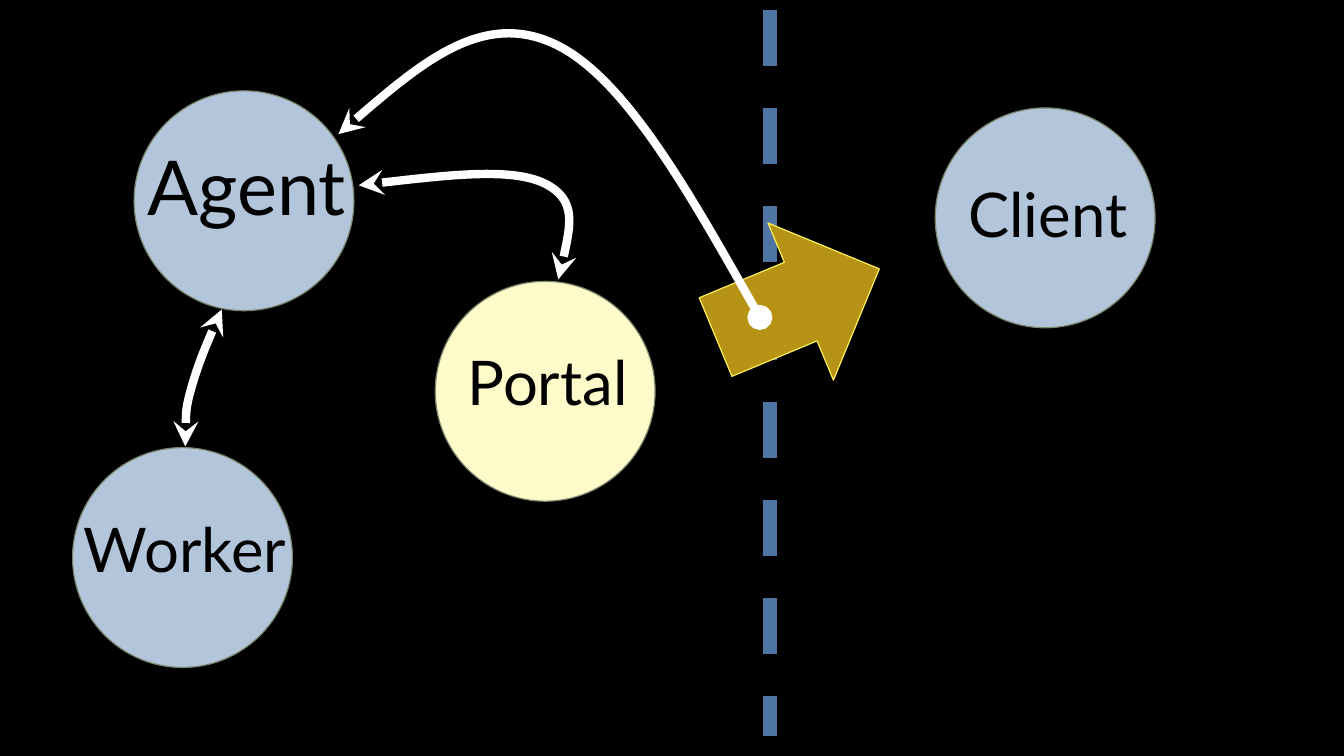
from dataclasses import dataclass

from lxml import etree
from pptx import Presentation, util as u
from pptx.dml import color
from pptx.enum import dml, shapes, text
from pptx.oxml import ns

Point = tuple[float, float]

SIZE = 5.54
BLUE = "B3C5DA"


@dataclass
class Node:
    label: str
    left: float
    top: float
    drop: float
    fill: str = BLUE
    font: int = 44
    height: float = 2.13


@dataclass
class Curve:
    start: Point
    bends: list[tuple[Point, Point, Point]]
    head: str = "stealth"


NODES = [
    Node("Agent", 3.38, 2.29, 1.09, font=54, height=2.57),
    Node("Client", 23.57, 2.72, 1.57),
    Node("Worker", 1.83, 11.28, 1.45),
    Node("Portal", 10.97, 7.09, 1.45, fill="FEFAC9"),
]

CURVES = [
    Curve((5.59, 7.8), [
        ((5.28, 8.48), (5, 9.17), (4.83, 9.75)),
        ((4.67, 10.31), (4.67, 10.8), (4.67, 11.25)),
    ]),
    Curve((9.04, 4.67), [
        ((10.95, 4.45), (12.88, 4.22), (13.72, 4.62)),
        ((14.55, 5.03), (14.33, 6.02), (14.07, 7.04)),
    ]),
    Curve((19.15, 8), [
        ((17.4, 4.9), (15.67, 1.83), (13.89, 1.07)),
        ((12.12, 0.3), (10.31, 1.83), (8.53, 3.38)),
    ], head="oval"),
]


def rgb(code: str) -> color.RGBColor:
    return color.RGBColor.from_string(code)


def place(point: Point) -> tuple[u.Length, u.Length]:
    return u.Cm(point[0]), u.Cm(point[1])


def stroke(item, code: str, width: float) -> None:
    item.line.color.rgb = rgb(code)
    item.line.width = u.Pt(width)


def add_form(slide, kind, box: tuple[float, ...], fill: str, edge: str):
    form = slide.shapes.add_shape(kind, *map(u.Cm, box))
    form.shadow.inherit = False
    form.fill.solid()
    form.fill.fore_color.rgb = rgb(fill)
    stroke(form, edge, 0.85)
    return form


def add_node(slide, node: Node) -> None:
    add_form(slide, shapes.MSO_SHAPE.OVAL, (node.left, node.top, SIZE, SIZE),
             node.fill, "7A866C")
    box = slide.shapes.add_textbox(*place((node.left - 1.1, node.top + node.drop)),
                                   u.Cm(7.87), u.Cm(node.height))
    frame = box.text_frame
    frame.word_wrap = True
    frame.auto_size = text.MSO_AUTO_SIZE.SHAPE_TO_FIT_TEXT
    frame.vertical_anchor = text.MSO_ANCHOR.MIDDLE
    para = frame.paragraphs[0]
    para.text = node.label
    para.alignment = text.PP_ALIGN.CENTER
    para.font.name = "Lato"
    para.font.size = u.Pt(node.font)
    para.font.color.rgb = rgb("000000")


def add_border(slide) -> None:
    border = slide.shapes.add_connector(
        shapes.MSO_CONNECTOR.STRAIGHT, *place((19.4, 0.25)), *place((19.4, 18.55)))
    stroke(border, "4E75A3", 10)
    border.line.dash_style = dml.MSO_LINE.DASH
    etree.SubElement(border._element.spPr, ns.qn("a:effectLst"))


def add_curve(slide, curve: Curve) -> None:
    pen = slide.shapes.build_freeform(*place(curve.start))
    pen.add_line_segments([place(bend[-1]) for bend in curve.bends], close=False)
    form = pen.convert_to_shape()
    form.shadow.inherit = False
    form.fill.background()
    stroke(form, "FFFFFF", 6)

    props = form._element.spPr
    for side, bend in zip(list(props.iter(ns.qn("a:lnTo"))), curve.bends):
        arc = etree.Element(ns.qn("a:cubicBezTo"))
        for x, y in map(place, bend):
            etree.SubElement(arc, ns.qn("a:pt"),
                             x=str(x - form.left), y=str(y - form.top))
        side.getparent().replace(side, arc)

    line = props.find(ns.qn("a:ln"))
    etree.SubElement(line, ns.qn("a:headEnd"), type=curve.head)
    etree.SubElement(line, ns.qn("a:tailEnd"), type="stealth")


def main() -> None:
    deck = Presentation()
    deck.slide_width, deck.slide_height = place((33.87, 19.05))
    slide = deck.slides.add_slide(deck.slide_layouts[6])
    slide.background.fill.solid()
    slide.background.fill.fore_color.rgb = rgb("000000")

    for node in NODES:
        add_node(slide, node)
    add_border(slide)
    arrow = add_form(slide, shapes.MSO_SHAPE.LEFT_ARROW, (17.86, 5.49, 4.47, 4.29),
                     "B79315", "FCF059")
    arrow.rotation = 157.4
    for curve in CURVES:
        add_curve(slide, curve)

    deck.save("out.pptx")


if __name__ == "__main__":
    main()
